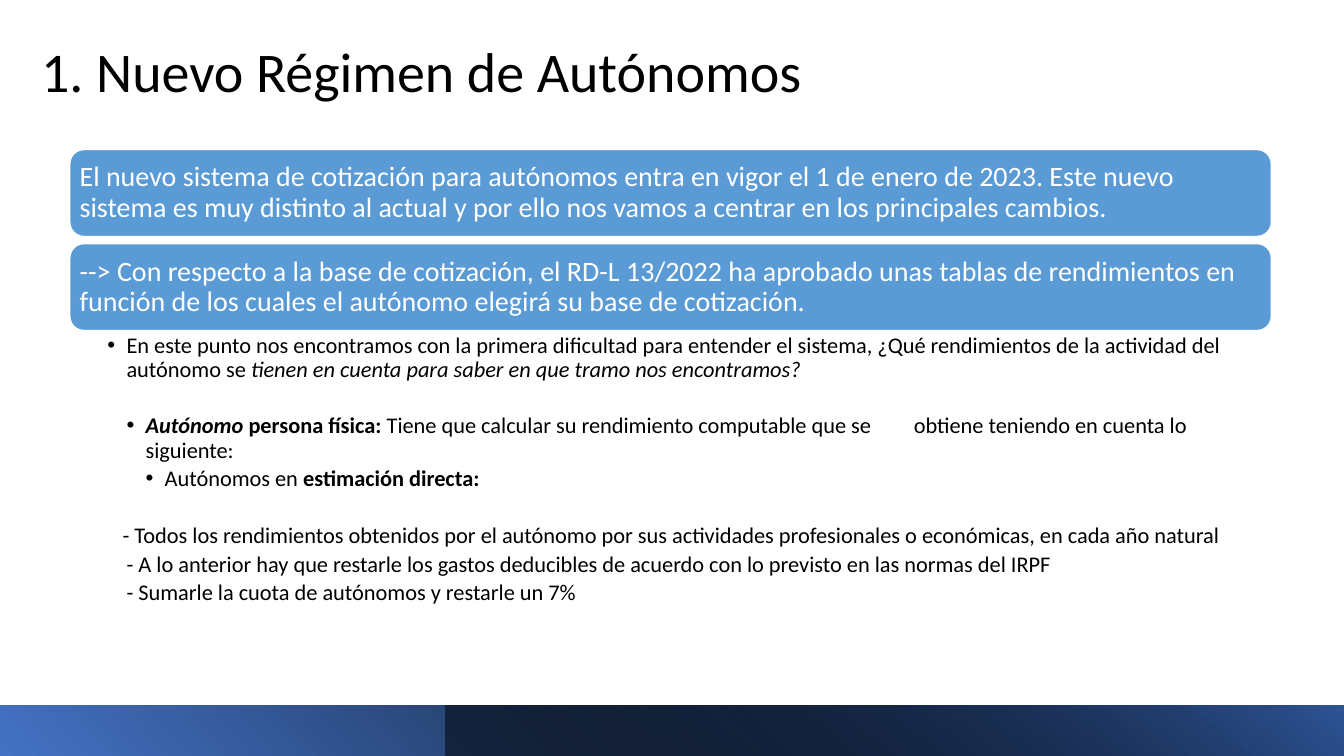
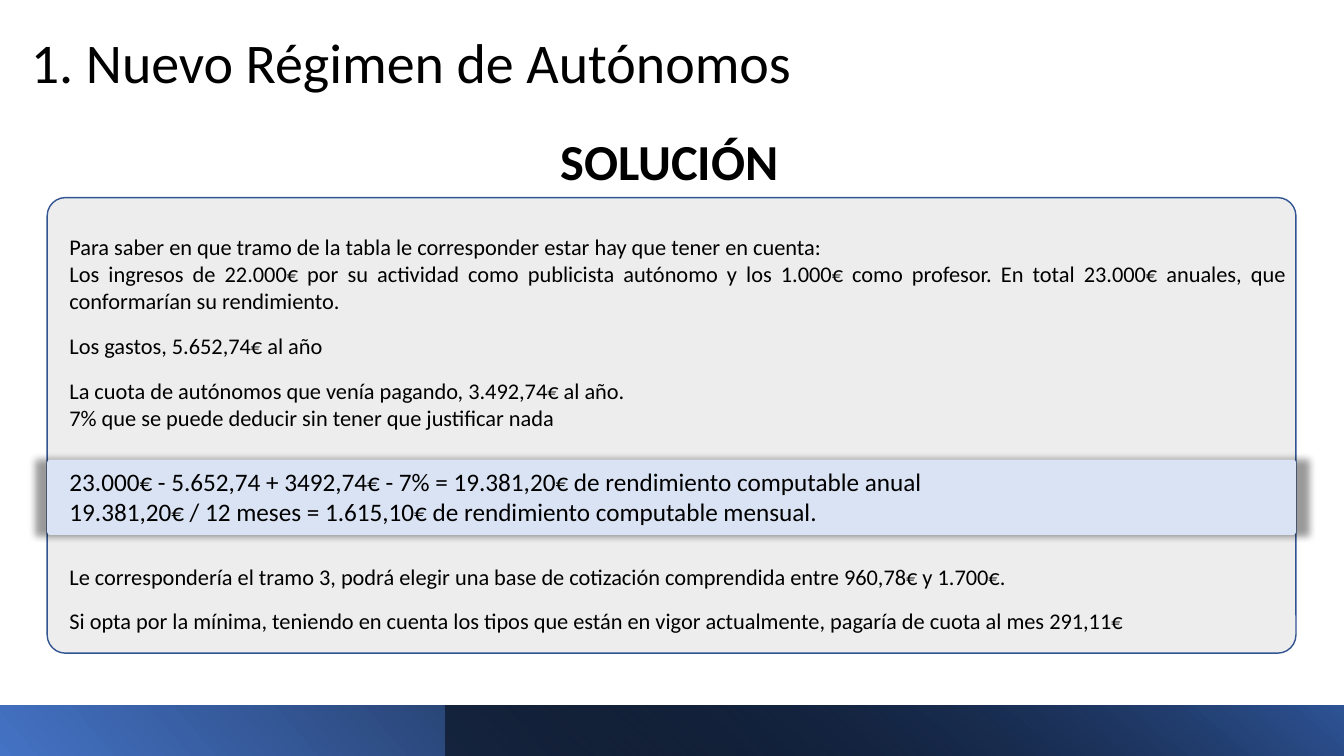
from lxml.etree import SubElement
from pptx import Presentation
from pptx.dml.color import RGBColor
from pptx.enum.shapes import MSO_SHAPE
from pptx.enum.text import MSO_ANCHOR, PP_ALIGN
from pptx.oxml.ns import qn
from pptx.util import Cm, Pt

BLACK = RGBColor(0x00, 0x00, 0x00)
WHITE = RGBColor(0xFF, 0xFF, 0xFF)
BRIGHT_BLUE = RGBColor(0x44, 0x72, 0xC4)
DEEP_BLUE = RGBColor(0x2F, 0x55, 0x97)
CARD_BLUE = RGBColor(0x5B, 0x9B, 0xD5)
PANEL_GREY = RGBColor(0xED, 0xED, 0xED)
PANEL_EDGE = RGBColor(0x32, 0x54, 0x91)
RESULT_BLUE = RGBColor(0xDA, 0xE3, 0xF3)

FONT = "Calibri"
TITLE = "1. Nuevo Régimen de Autónomos"
PAGE_WIDTH, PAGE_HEIGHT = 33.87, 19.05
FOOTER_TOP = 17.78
FOOTER_SPLIT = 11.22
HANGING = 0.48


def write(frame, runs, size=16, color=BLACK, bold=False, align=PP_ALIGN.LEFT,
          line=1.0, before=0, after=0, margin=0, bullet=False):
    para = frame.paragraphs[0]
    if para.runs:
        para = frame.add_paragraph()
    para.alignment = align
    para.line_spacing = line
    para.space_before = Pt(before)
    para.space_after = Pt(after)
    properties = para._p.get_or_add_pPr()
    properties.set("marL", str(Cm(margin)))
    properties.set("indent", str(Cm(-HANGING if bullet else 0)))
    if bullet:
        SubElement(properties, qn("a:buFont"), typeface="Arial")
        SubElement(properties, qn("a:buChar"), char="•")
    if isinstance(runs, str):
        runs = [(runs, bold, False)]
    for text, is_bold, is_italic in runs:
        span = para.add_run()
        span.text = text
        span.font.name = FONT
        span.font.size = Pt(size)
        span.font.color.rgb = color
        span.font.bold = is_bold
        span.font.italic = is_italic


def add_box(page, kind, left, top, width, height, fill=None, edge=None, edge_width=1):
    box = page.shapes.add_shape(kind, Cm(left), Cm(top), Cm(width), Cm(height))
    box.shadow.inherit = False
    if fill is not None:
        box.fill.solid()
        box.fill.fore_color.rgb = fill
    if edge is None:
        box.line.fill.background()
    else:
        box.line.color.rgb = edge
        box.line.width = Pt(edge_width)
    return box


deck = Presentation()
deck.slide_width = Cm(PAGE_WIDTH)
deck.slide_height = Cm(PAGE_HEIGHT)

pages = []
for title_left, title_top in [(0.51, 0.84), (0.25, 0.61)]:
    page = deck.slides.add_slide(deck.slide_layouts[5])
    pages.append(page)
    for left, angle, start, end, end_position, alpha in [
        (0, 40, BRIGHT_BLUE, BLACK, 0.9, 100),
        (FOOTER_SPLIT, 50, BLACK, DEEP_BLUE, 1, 50),
    ]:
        band = add_box(page, MSO_SHAPE.RECTANGLE, left, FOOTER_TOP,
                       PAGE_WIDTH - left, PAGE_HEIGHT - FOOTER_TOP)
        band.fill.gradient()
        band.fill.gradient_angle = angle
        first, last = band.fill.gradient_stops
        first.color.rgb, last.color.rgb = start, end
        first.position, last.position = 0, end_position
        if alpha < 100:
            start_color = next(band._element.spPr.iter(qn("a:srgbClr")))
            SubElement(start_color, qn("a:alpha"), val=str(alpha * 1000))

    title = page.shapes.title
    title.left, title.top = Cm(title_left), Cm(title_top)
    title.width, title.height = Cm(19.94), Cm(2.06)
    title.text_frame.vertical_anchor = MSO_ANCHOR.MIDDLE
    write(title.text_frame, TITLE, size=40, align=PP_ALIGN.RIGHT, line=0.9)

system_page, solution_page = pages

CARD_LEFT, CARD_TOP, CARD_WIDTH, CARD_HEIGHT, CARD_STEP = 1.75, 3.76, 30.3, 2.21, 2.37
cards = [
    "El nuevo sistema de cotización para autónomos entra en vigor el 1 de enero de 2023. "
    "Este nuevo sistema es muy distinto al actual y por ello nos vamos a centrar en los "
    "principales cambios.",
    "--> Con respecto a la base de cotización, el RD-L 13/2022 ha aprobado unas tablas de "
    "rendimientos en función de los cuales el autónomo elegirá su base de cotización.",
]
for index, text in enumerate(cards):
    card = add_box(system_page, MSO_SHAPE.ROUNDED_RECTANGLE, CARD_LEFT,
                   CARD_TOP + index * CARD_STEP, CARD_WIDTH, CARD_HEIGHT,
                   CARD_BLUE, WHITE, 1.5)
    frame = card.text_frame
    frame.word_wrap = True
    frame.vertical_anchor = MSO_ANCHOR.MIDDLE
    frame.margin_left = frame.margin_right = Cm(0.15)
    write(frame, text, size=20, color=WHITE, line=0.9)

details = system_page.shapes.add_textbox(Cm(CARD_LEFT), Cm(8.33), Cm(CARD_WIDTH), Cm(7.37))
frame = details.text_frame
frame.word_wrap = True
frame.margin_left, frame.margin_right = Cm(0.96), Cm(0.41)
frame.margin_top = frame.margin_bottom = Cm(0.08)
for runs, margin, bullet, before in [
    ([("En este punto nos encontramos con la primera dificultad para entender el sistema, "
       "¿Qué rendimientos de la actividad del autónomo se ", False, False),
      ("tienen en cuenta para saber en que tramo nos encontramos?", False, True)],
     HANGING, True, 0),
    ([("Autónomo ", True, True),
      ("persona física: ", True, False),
      ("Tiene que calcular su rendimiento computable que se \tobtiene teniendo en cuenta "
       "lo siguiente:", False, False)], 2 * HANGING, True, 20),
    ([("Autónomos en ", False, False), ("estimación directa:", True, False)],
     3 * HANGING, True, 0),
    ("- Todos los rendimientos obtenidos por el autónomo por sus actividades profesionales "
     "o económicas, en cada año natural", 0.38, False, 20),
    ("- A lo anterior hay que restarle los gastos deducibles de acuerdo con lo previsto en "
     "las normas del IRPF", HANGING, False, 0),
    ("- Sumarle la cuota de autónomos y restarle un 7%", HANGING, False, 0),
]:
    write(frame, runs, line=0.9, before=before, after=3.2, margin=margin, bullet=bullet)

PANEL_LEFT, PANEL_WIDTH = 1.19, 31.47
panel = add_box(solution_page, MSO_SHAPE.ROUNDED_RECTANGLE, PANEL_LEFT, 4.98,
                PANEL_WIDTH, 11.48, PANEL_GREY, PANEL_EDGE)
result = add_box(solution_page, MSO_SHAPE.ROUNDED_RECTANGLE, PANEL_LEFT, 11.58,
                 PANEL_WIDTH, 1.9, RESULT_BLUE)
for box in (panel, result):
    box.adjustments[0] = 0.04
effects = result._element.spPr.find(qn("a:effectLst"))
shadow = SubElement(effects, qn("a:outerShdw"), blurRad=str(Pt(5)), sx="102000",
                    sy="102000", algn="ctr", rotWithShape="0")
shadow_color = SubElement(shadow, qn("a:srgbClr"), val=str(BLACK))
SubElement(shadow_color, qn("a:alpha"), val="40000")

heading = solution_page.shapes.add_textbox(Cm(13.87), Cm(3.15), Cm(6.07), Cm(1.8))
heading.text_frame.word_wrap = False
write(heading.text_frame, "SOLUCIÓN", size=36, bold=True)

solution = solution_page.shapes.add_textbox(Cm(1.5), Cm(5.76), Cm(31.19), Cm(10.49))
solution.text_frame.word_wrap = True
GAP = 12.8
for text, size, before in [
    ("Para saber en que tramo de la tabla le corresponder estar hay que tener en cuenta:", 16, 0),
    ("Los ingresos de 22.000€ por su actividad como publicista autónomo y los 1.000€ como "
     "profesor. En total 23.000€ anuales, que conformarían su rendimiento.", 16, 0),
    ("Los gastos, 5.652,74€ al año", 16, GAP),
    ("La cuota de autónomos que venía pagando, 3.492,74€ al año.", 16, GAP),
    ("7% que se puede deducir sin tener que justificar nada", 16, 0),
    ("23.000€ - 5.652,74 + 3492,74€ - 7% = 19.381,20€ de rendimiento computable anual",
     18, 2 * GAP),
    ("19.381,20€ / 12 meses = 1.615,10€ de rendimiento computable mensual.", 18, 0),
    ("Le correspondería el tramo 3, podrá elegir una base de cotización comprendida entre "
     "960,78€ y 1.700€.", 16, 2 * GAP),
    ("Si opta por la mínima, teniendo en cuenta los tipos que están en vigor actualmente, "
     "pagaría de cuota al mes 291,11€", 16, GAP),
]:
    write(solution.text_frame, text, size=size, before=before, align=PP_ALIGN.JUSTIFY)

deck.save("out.pptx")
